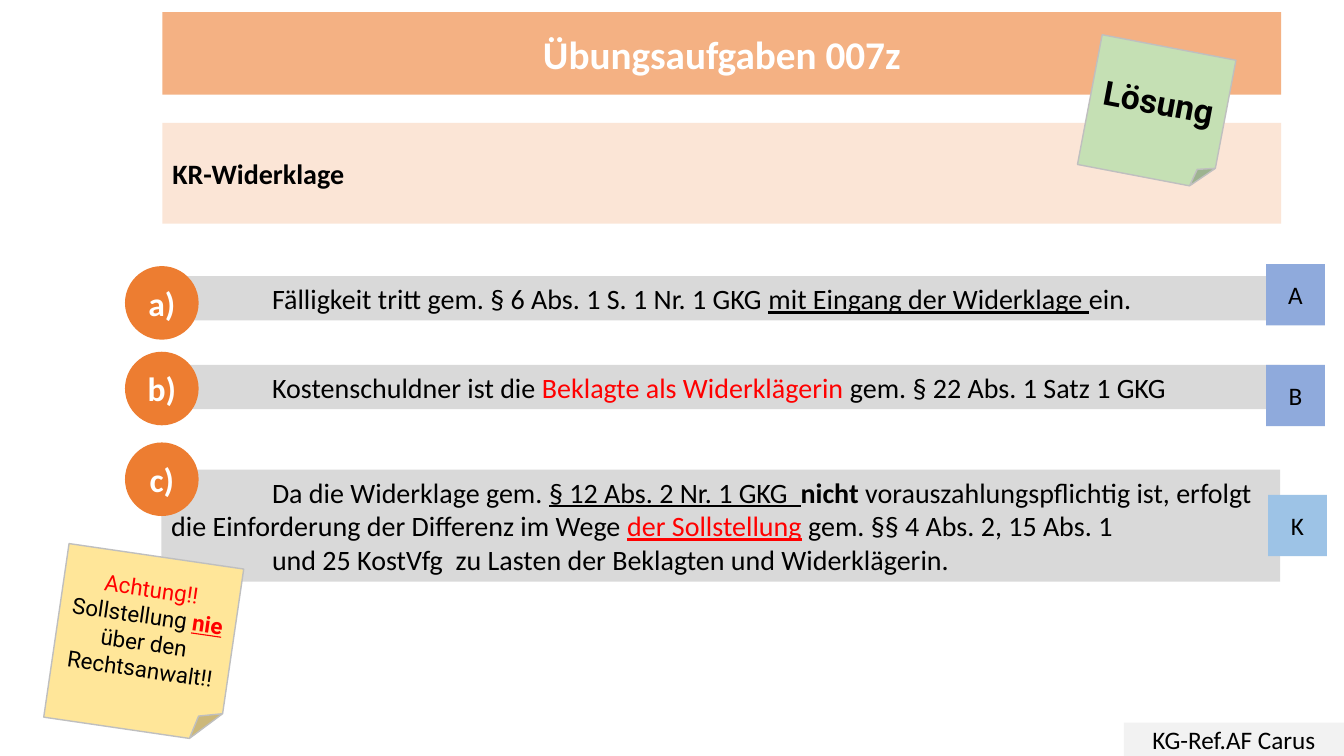
from lxml import etree
from pptx import Presentation
from pptx.dml.color import RGBColor
from pptx.enum.shapes import MSO_SHAPE
from pptx.enum.text import MSO_ANCHOR, MSO_AUTO_SIZE, PP_ALIGN
from pptx.oxml.ns import qn
from pptx.util import Inches, Pt

SLIDE_WIDTH, SLIDE_HEIGHT = Inches(13.333), Inches(7.5)
BLACK = RGBColor(0x00, 0x00, 0x00)
WHITE = RGBColor(0xFF, 0xFF, 0xFF)
RED = RGBColor(0xFF, 0x00, 0x00)
GREY = RGBColor(0xD9, 0xD9, 0xD9)
PALE_GREY = RGBColor(0xF2, 0xF2, 0xF2)
EDGE_GREY = RGBColor(0xBF, 0xBF, 0xBF)
ORANGE = RGBColor(0xED, 0x7D, 0x31)
LIGHT_ORANGE = RGBColor(0xF4, 0xB1, 0x83)
PALE_ORANGE = RGBColor(0xFB, 0xE5, 0xD6)
GREEN = RGBColor(0xC5, 0xE0, 0xB4)
YELLOW = RGBColor(0xFF, 0xE6, 0x99)
BLUE = RGBColor(0x8F, 0xAA, 0xDC)
LIGHT_BLUE = RGBColor(0x9D, 0xC3, 0xE6)

BAR_LEFT, HEADER_LEFT, BAR_WIDTH = 12, 12.08, 83.25
UNDERLINED = {"underline": True}

# Paragraphs of each answer, as (text, format) spans
ANSWER_A = [[("Fälligkeit tritt gem. § 6 Abs. 1 S. 1 Nr. 1 GKG ", {}),
             ("mit Eingang der Widerklage ", UNDERLINED), ("ein.", {})]]
ANSWER_B = [[("Kostenschuldner ist die ", {}),
             ("Beklagte als Widerklägerin ", {"color": RED}),
             ("gem. § 22 Abs. 1 Satz 1 GKG", {})]]
ANSWER_C = [[("Da die Widerklage gem. ", {}),
             ("§ 12 Abs. 2 Nr. 1 GKG  ", UNDERLINED),
             ("nicht", {"bold": True}),
             (" vorauszahlungspflichtig ist, erfolgt die Einforderung"
              " der Differenz im Wege ", {}),
             ("der Sollstellung", {"color": RED, "underline": True}),
             (" gem. §§ 4 Abs. 2, 15 Abs. 1", {})],
            [("und 25 KostVfg  zu Lasten der Beklagten und Widerklägerin.", {})]]
WARNING = [[("Achtung!!", {"color": RED})],
           [("Sollstellung ", {}),
            ("nie", {"color": RED, "bold": True, "underline": True}),
            (" über den Rechtsanwalt!!", {})]]

# Per row: letter, badge top, answer, bar top and height, marker with its place
ROWS = [
    ("a)", 35.2, ANSWER_A, 36.53, 5.87, "A", 94.2, 34.93, BLUE),
    ("b)", 46.53, ANSWER_B, 48.27, 5.87, "B", 94.2, 48.27, BLUE),
    ("c)", 58.53, ANSWER_C, 62.13, 14.8, "K", 94.35, 65.47, LIGHT_BLUE),
]


def place(left, top, width, height):
    """Turn percentages of the slide's size into lengths."""
    return (int(SLIDE_WIDTH * left / 100), int(SLIDE_HEIGHT * top / 100),
            int(SLIDE_WIDTH * width / 100), int(SLIDE_HEIGHT * height / 100))


def write(box, content, size=20, font="Calibri", color=BLACK, bold=False,
          align=PP_ALIGN.CENTER, indent=0):
    """Write a string, or paragraphs of (text, format) spans, into a shape."""
    paragraphs = [[(content, {})]] if isinstance(content, str) else content
    frame = box.text_frame
    frame.word_wrap = True
    frame.auto_size = MSO_AUTO_SIZE.NONE
    frame.vertical_anchor = MSO_ANCHOR.MIDDLE
    for number, spans in enumerate(paragraphs):
        para = frame.add_paragraph() if number else frame.paragraphs[0]
        para.alignment = align
        if indent:
            para._p.get_or_add_pPr().set("indent", str(int(indent)))
        for text, style in spans:
            span = para.add_run()
            span.text = text
            span.font.name = font
            span.font.size = Pt(size)
            span.font.bold = style.get("bold", bold)
            span.font.underline = style.get("underline", False)
            span.font.color.rgb = style.get("color", color)


def fill_solid(box, color):
    box.fill.solid()
    box.fill.fore_color.rgb = color


def add_box(slide, area, fill, content, kind=MSO_SHAPE.RECTANGLE, **style):
    box = slide.shapes.add_shape(kind, *place(*area))
    box.shadow.inherit = False
    fill_solid(box, fill)
    box.line.fill.background()
    write(box, content, **style)
    return box


def add_note(slide, area, fill, content, rotation, **style):
    note = add_box(slide, area, fill, content, MSO_SHAPE.FOLDED_CORNER,
                   font="Roboto", **style)
    note.rotation = rotation
    note.line.color.rgb = EDGE_GREY
    note.line.width = Pt(1)


def format_title(title):
    """Make the title placeholder a rounded, filled header bar."""
    title.left, title.top, title.width, title.height = place(
        HEADER_LEFT, 1.6, BAR_WIDTH, 10.93)
    outline = etree.SubElement(title._element.spPr, qn("a:prstGeom"),
                               prst="roundRect")
    etree.SubElement(outline, qn("a:avLst"))
    fill_solid(title, LIGHT_ORANGE)
    write(title, "Übungsaufgaben 007z", size=28, color=WHITE, bold=True)


def main():
    deck = Presentation()
    deck.slide_width, deck.slide_height = SLIDE_WIDTH, SLIDE_HEIGHT
    slide = deck.slides.add_slide(deck.slide_layouts[5])

    format_title(slide.shapes.title)
    add_box(slide, (HEADER_LEFT, 16.27, BAR_WIDTH, 13.33), PALE_ORANGE,
            "KR-Widerklage", bold=True, align=PP_ALIGN.LEFT)
    add_box(slide, (83.63, 95.6, 16.37, 4.4), PALE_GREY, "KG-Ref.AF Carus",
            size=18)

    for (letter, badge_top, answer, bar_top, bar_height,
         marker, marker_left, marker_top, marker_color) in ROWS:
        add_box(slide, (BAR_LEFT, bar_top, BAR_WIDTH, bar_height), GREY,
                answer, align=PP_ALIGN.LEFT, indent=Inches(1))
        add_box(slide, (9.3, badge_top, 5.48, 9.73), ORANGE, letter,
                MSO_SHAPE.FLOWCHART_CONNECTOR, size=24, color=WHITE, bold=True)
        add_box(slide, (marker_left, marker_top, 4.38, 8.1), marker_color,
                marker, size=18)

    add_note(slide, (81, 6.13, 10.13, 17.47), GREEN, "Lösung", 10.8,
             size=24, bold=True)
    add_note(slide, (4.13, 73.47, 13.13, 23.2), YELLOW, WARNING, 8.3, size=16)
    deck.save("out.pptx")


if __name__ == "__main__":
    main()
